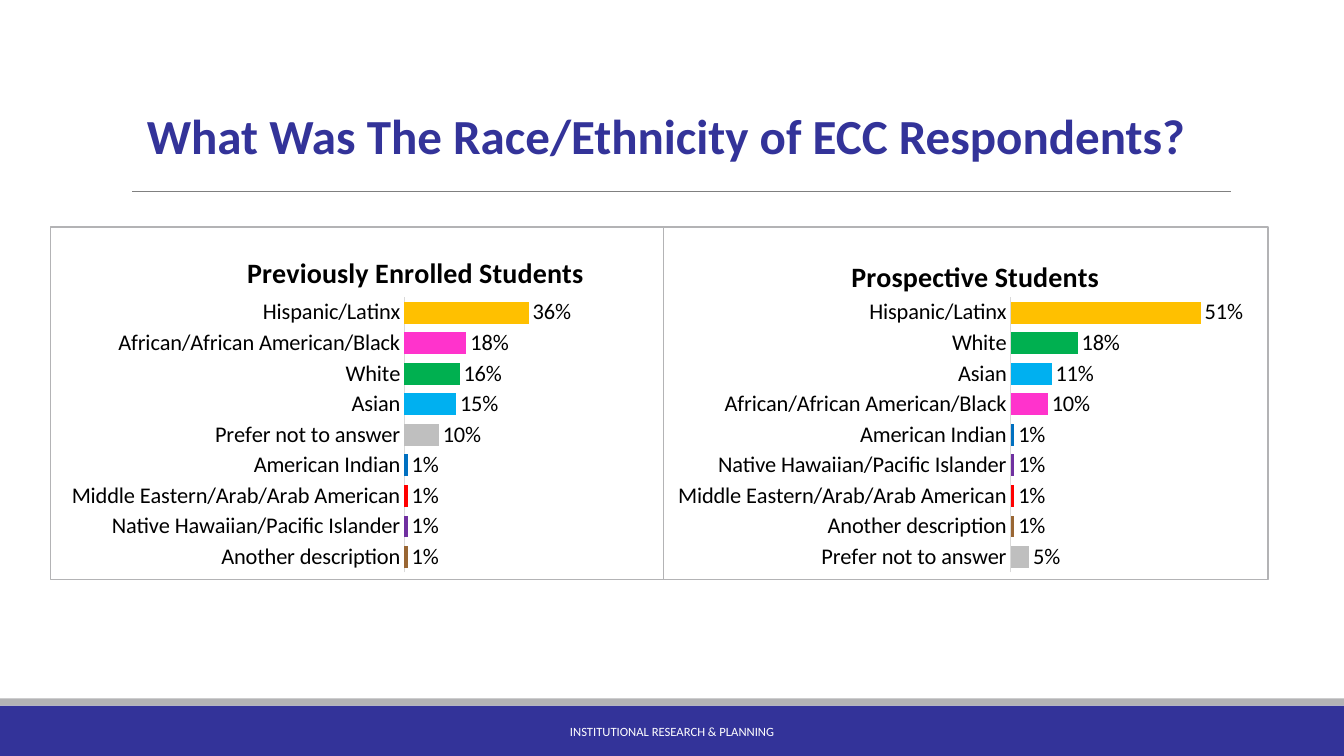
from lxml import etree
from pptx import Presentation
from pptx.chart.data import CategoryChartData
from pptx.dml.color import RGBColor
from pptx.enum.chart import XL_CHART_TYPE as CT, XL_LABEL_POSITION as LP, XL_TICK_MARK as TM
from pptx.enum.shapes import MSO_CONNECTOR as MC, MSO_SHAPE as MS
from pptx.enum.text import MSO_ANCHOR, PP_ALIGN
from pptx.oxml import parse_xml
from pptx.oxml.ns import nsdecls, qn
from pptx.util import Inches, Pt

W, H = 13.33, 7.5
FONT = "Calibri"
NAVY = RGBColor(0x33, 0x33, 0x99)
SILVER = RGBColor(0xB3, 0xB3, 0xB5)
GRAY = RGBColor(0x80, 0x80, 0x80)
PALE = RGBColor(0xD9, 0xD9, 0xD9)
BLACK = RGBColor(0, 0, 0)
WHITE = RGBColor(0xFF, 0xFF, 0xFF)

GROUP_COLORS = {
    "Hispanic/Latinx": RGBColor(0xFF, 0xC0, 0x00),
    "African/African American/Black": RGBColor(0xFF, 0x33, 0xCC),
    "White": RGBColor(0x00, 0xB0, 0x50),
    "Asian": RGBColor(0x00, 0xB0, 0xF0),
    "Prefer not to answer": RGBColor(0xBF, 0xBF, 0xBF),
    "American Indian": RGBColor(0x00, 0x70, 0xC0),
    "Middle Eastern/Arab/Arab American": RGBColor(0xFF, 0x00, 0x00),
    "Native Hawaiian/Pacific Islander": RGBColor(0x70, 0x30, 0xA0),
    "Another description": RGBColor(0x99, 0x66, 0x33),
}
ENROLLED = dict(zip(GROUP_COLORS, [0.36, 0.18, 0.16, 0.15, 0.1, 0.01, 0.01, 0.01, 0.01]))
PROSPECTIVE = {
    "Prefer not to answer": 0.05,
    "Another description": 0.01,
    "Middle Eastern/Arab/Arab American": 0.01,
    "Native Hawaiian/Pacific Islander": 0.01,
    "American Indian": 0.01,
    "African/African American/Black": 0.1,
    "Asian": 0.11,
    "White": 0.18,
    "Hispanic/Latinx": 0.51,
}


def set_font(font, size, color, bold=False):
    font.name, font.size, font.bold = FONT, Pt(size), bold
    font.color.rgb = color


def add_rect(slide, box, fill=None, line=None, width=0):
    sp = slide.shapes.add_shape(MS.RECTANGLE, *map(Inches, box))
    sp.shadow.inherit = False
    if fill is None:
        sp.fill.background()
    else:
        sp.fill.solid()
        sp.fill.fore_color.rgb = fill
    if line is None:
        sp.line.fill.background()
    else:
        sp.line.color.rgb = line
        sp.line.width = Pt(width)


def add_line(slide, x1, y1, x2, y2, color, width):
    ln = slide.shapes.add_connector(MC.STRAIGHT, *map(Inches, (x1, y1, x2, y2)))
    ln.line.color.rgb = color
    ln.line.width = Pt(width)
    etree.SubElement(ln._element.spPr, qn("a:effectLst"))


def add_text(slide, box, text, size, color, bold=False, anchor=MSO_ANCHOR.TOP):
    tf = slide.shapes.add_textbox(*map(Inches, box)).text_frame
    tf.word_wrap = True
    tf.vertical_anchor = anchor
    p = tf.paragraphs[0]
    p.alignment = PP_ALIGN.CENTER
    r = p.add_run()
    r.text = text
    set_font(r.font, size, color, bold)


def set_layout(parent, index, target="", **shares):
    for old in parent.findall(qn("c:layout")):
        parent.remove(old)
    modes = "".join(f'<c:{axis}Mode val="edge"/>' for axis in "xy")
    values = "".join(f'<c:{key} val="{share}"/>' for key, share in shares.items())
    parent.insert(index, parse_xml(
        f'<c:layout {nsdecls("c")}><c:manualLayout>{target}{modes}{values}'
        "</c:manualLayout></c:layout>"))


def add_race_chart(slide, box, title, shares, title_at, plot_at, reverse=False):
    data = CategoryChartData(number_format="0%")
    data.categories = list(shares)
    data.add_series("Series 1", list(shares.values()))
    chart = slide.shapes.add_chart(CT.BAR_CLUSTERED, *map(Inches, box), data).chart
    set_font(chart.font, 18, BLACK)
    chart.has_legend = False

    chart.has_title = True
    r = chart.chart_title.text_frame.paragraphs[0].add_run()
    r.text = title
    set_font(r.font, 20, BLACK, True)
    set_layout(chart.chart_title._element, 1, x=title_at[0], y=title_at[1])
    set_layout(chart._chartSpace.chart.plotArea, 0, '<c:layoutTarget val="inner"/>',
               **dict(zip("xywh", plot_at)))

    cat = chart.category_axis
    cat.reverse_order = reverse
    cat.major_tick_mark = cat.minor_tick_mark = TM.NONE
    cat.format.line.color.rgb = PALE
    cat.format.line.width = Pt(0.75)
    set_font(cat.tick_labels.font, 16, BLACK)
    val = chart.value_axis
    val.minimum_scale, val.maximum_scale = 0, 1
    val.has_major_gridlines = False
    val.visible = False

    plot = chart.plots[0]
    plot.gap_width = 40
    plot.vary_by_categories = False
    plot.has_data_labels = True
    labels = plot.data_labels
    labels.show_value = True
    labels.position = LP.OUTSIDE_END
    labels.number_format = "0%"
    labels.number_format_is_linked = False
    set_font(labels.font, 16, BLACK)
    series = plot.series[0]
    series.format.fill.solid()
    series.format.fill.fore_color.rgb = SILVER
    for i, group in enumerate(shares):
        fill = series.points[i].format.fill
        fill.solid()
        fill.fore_color.rgb = GROUP_COLORS[group]


def add_heading(slide, x, y, w, h):
    add_text(slide, (x, y, w, h), "What Was The Race/Ethnicity of ECC Respondents? ",
             35, NAVY, True)
    add_line(slide, x + 0.22, y + 0.9, x + w - 0.03, y + 0.9, GRAY, 0.5)


def add_footer(slide, x, y, w, h):
    band = 0.07
    add_rect(slide, (x, y + band, w, h - band), NAVY)
    add_rect(slide, (x, y, w, band), SILVER)
    add_text(slide, (x + 4.03, y + 0.13, 5.27, 0.4), "INSTITUTIONAL RESEARCH & PLANNING",
             9, WHITE, anchor=MSO_ANCHOR.MIDDLE)


def add_chart_panel(slide, x, y, w, h):
    middle = x + 6.08
    add_race_chart(slide, (x + 0.08, y, 7, h), "Previously Enrolled Students", ENROLLED,
                   (0.26, 0.06), (0.49, 0.2, 0.49, 0.78), reverse=True)
    add_race_chart(slide, (middle, y, 7.25, h), "Prospective Students ", PROSPECTIVE,
                   (0.25, 0.07), (0.475, 0.2, 0.51, 0.78))
    add_rect(slide, (x, y, w, h), line=SILVER, width=1.25)
    add_line(slide, middle, y, middle, y + h, SILVER, 1)


def main():
    prs = Presentation()
    prs.slide_width, prs.slide_height = Inches(W), Inches(H)
    slide = prs.slides.add_slide(prs.slide_layouts[6])
    add_footer(slide, 0, H - 0.57, W, 0.57)
    add_heading(slide, 1.09, 1, 11.15, 0.69)
    add_chart_panel(slide, 0.5, 2.25, 12.08, 3.5)
    prs.save("out.pptx")


if __name__ == "__main__":
    main()
